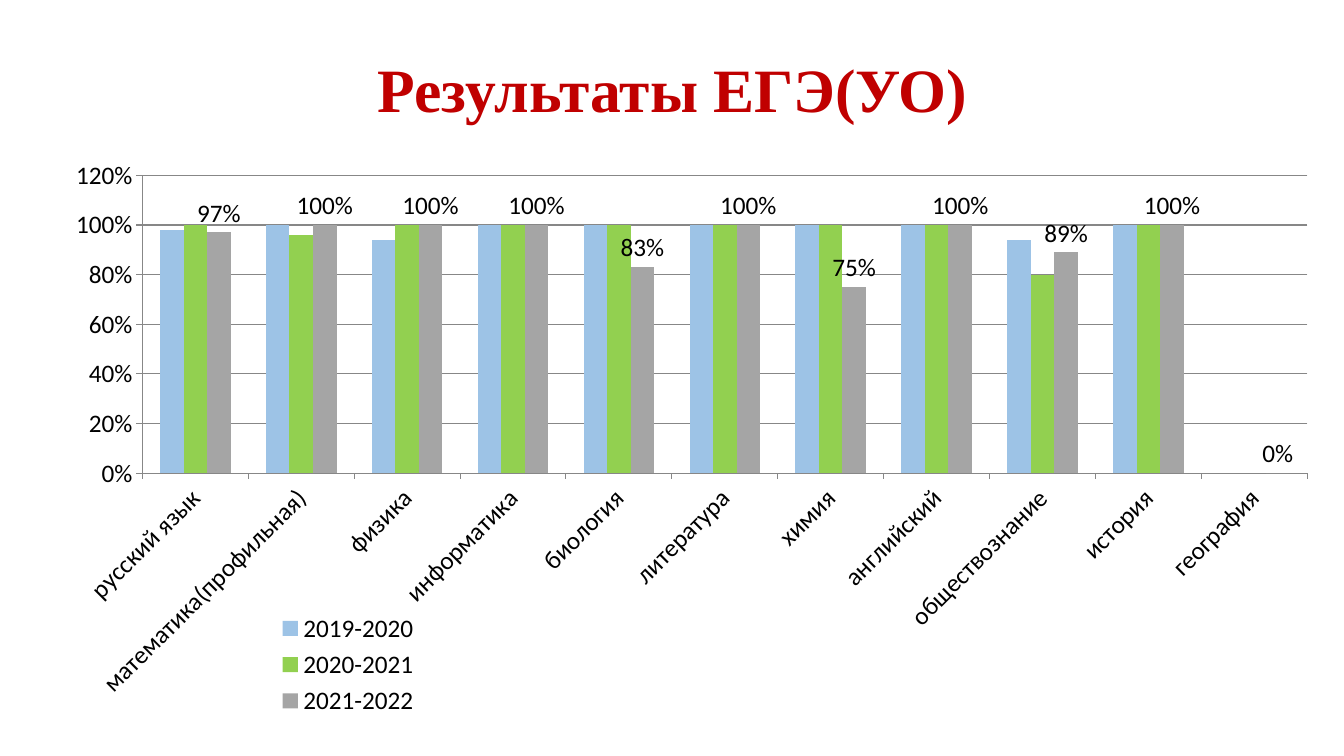
from pptx import Presentation
from pptx.chart.data import CategoryChartData as ChartData
from pptx.dml.color import RGBColor as Rgb
from pptx.enum.chart import XL_CHART_TYPE as Kind
from pptx.enum.chart import XL_LABEL_POSITION as Spot
from pptx.enum.chart import XL_LEGEND_POSITION as Side
from pptx.enum.chart import XL_TICK_MARK as Tick
from pptx.enum.text import MSO_ANCHOR as Anchor
from pptx.enum.text import PP_ALIGN as Align
from pptx.oxml import parse_xml
from pptx.oxml.ns import nsdecls, qn
from pptx.util import Inches, Pt

COLORS = {"title": "C00000", "text": "000000", "line": "878787"}
EXAMS = ["русский язык", "математика(профильная)", "физика", "информатика",
         "биология", "литература", "химия", "английский",
         "обществознание", "история", "география"]
# School year: bar color and share of passes for each exam
YEARS = {
    "2019-2020": ("9DC3E6", [0.98, 1, 0.94, 1, 1, 1, 1, 1, 0.94, 1, None]),
    "2020-2021": ("92D050", [1, 0.96, 1, 1, 1, 1, 1, 1, 0.8, 1, None]),
    "2021-2022": ("A5A5A5", [0.97, 1, 1, 1, 0.83, 1, 0.75, 1, 0.89, 1, 0]),
}


def paint(font, size, color):
    font.size = Pt(size)
    font.color.rgb = Rgb.from_string(COLORS[color])


def place(part, index, box, inner=False):
    """Give a chart part a fixed box, in fractions of the chart."""
    for old in part.findall(qn("c:layout")):
        part.remove(old)
    tags = '<c:layoutTarget val="inner"/>' if inner else ""
    tags += '<c:xMode val="edge"/><c:yMode val="edge"/>'
    tags += "".join(f'<c:{key} val="{val}"/>' for key, val in zip("xywh", box))
    part.insert(index, parse_xml(
        f'<c:layout {nsdecls("c")}><c:manualLayout>{tags}'
        "</c:manualLayout></c:layout>"))


def add_title(slide, text):
    title = slide.shapes.title
    title.left, title.top = Inches(0.37), Inches(0.29)
    title.width, title.height = Inches(12.6), Inches(1.25)
    frame = title.text_frame
    frame.word_wrap = True
    frame.vertical_anchor = Anchor.MIDDLE
    para = frame.paragraphs[0]
    para.alignment = Align.CENTER
    para.line_spacing = 0.9
    run = para.add_run()
    run.text = text
    paint(run.font, 44, "title")
    run.font.name = "Times New Roman"
    run.font.bold = True


def style_axis(axis):
    axis.major_tick_mark = Tick.OUTSIDE
    axis.minor_tick_mark = Tick.NONE
    axis.format.line.color.rgb = Rgb.from_string(COLORS["line"])
    axis.format.line.width = Pt(0.75)


def add_labels(series):
    labels = series.data_labels
    labels.show_value = True
    labels.number_format = "0%"
    labels.number_format_is_linked = False
    labels.position = Spot.OUTSIDE_END
    paint(labels.font, 18, "text")


def add_chart(slide):
    data = ChartData(number_format="0%")
    data.categories = EXAMS
    for year, (_, shares) in YEARS.items():
        data.add_series(year, shares)
    chart = slide.shapes.add_chart(
        Kind.COLUMN_CLUSTERED, Inches(0.16), Inches(1.53),
        Inches(12.91), Inches(5.69), data).chart
    chart.has_title = False
    paint(chart.font, 18, "text")
    chart.font.name = "Calibri"

    # Bars
    plot = chart.plots[0]
    plot.gap_width = 150
    plot.overlap = 0
    plot.vary_by_categories = False
    for series, (color, _) in zip(plot.series, YEARS.values()):
        series.format.fill.solid()
        series.format.fill.fore_color.rgb = Rgb.from_string(color)
        series.invert_if_negative = False
    add_labels(plot.series[-1])

    # Axes
    exams, scale = chart.category_axis, chart.value_axis
    style_axis(exams)
    style_axis(scale)
    exams.tick_labels.font.size = Pt(18)
    exams.format.line.width = Pt(0.75)
    body = exams.tick_labels.font._element.getparent().getparent().getparent()
    body.find(qn("a:bodyPr")).set("rot", "-2700000")
    scale.minimum_scale, scale.maximum_scale = 0, 1.2
    scale.major_unit = 0.2
    scale.tick_labels.number_format = "0%"
    scale.tick_labels.number_format_is_linked = False
    scale.has_major_gridlines = True
    grid = scale.major_gridlines.format.line
    grid.color.rgb = Rgb.from_string(COLORS["line"])
    grid.width = Pt(0.75)

    # Legend and plot area
    chart.has_legend = True
    legend = chart.legend
    legend.position = Side.RIGHT
    legend.include_in_layout = False
    paint(legend.font, 18, "text")
    root = chart._chartSpace.chart
    place(root.plotArea, 0, (0.097, 0.037, 0.895, 0.519), inner=True)
    place(root.find(qn("c:legend")), 1, (0.19, 0.79, 0.13, 0.2))


def main():
    deck = Presentation()
    deck.slide_width, deck.slide_height = Inches(13.33), Inches(7.5)
    slide = deck.slides.add_slide(deck.slide_layouts[5])
    add_title(slide, "Результаты ЕГЭ(УО)")
    add_chart(slide)
    deck.save("out.pptx")


if __name__ == "__main__":
    main()
